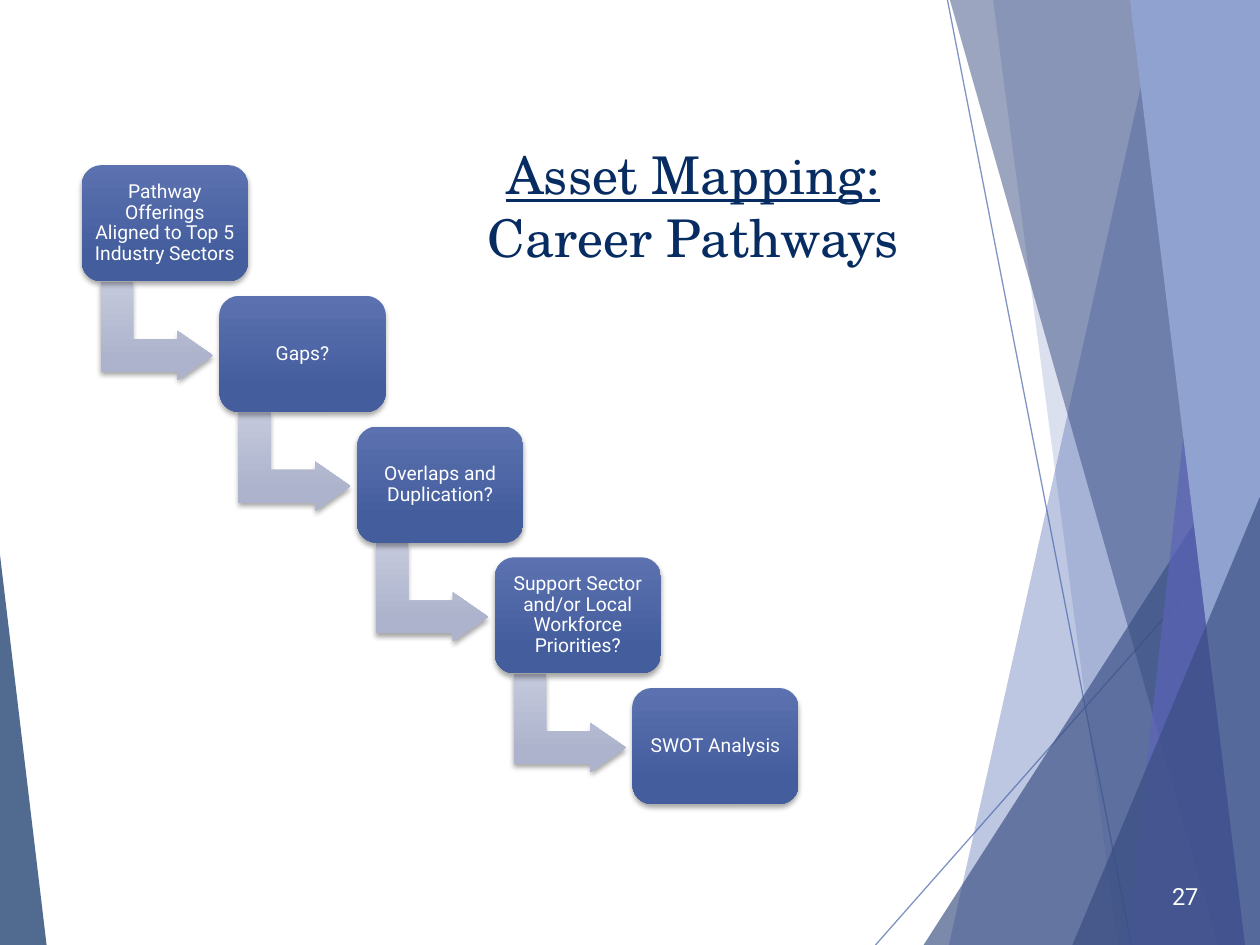
import dataclasses

import lxml.etree
import pptx
import pptx.dml.color
import pptx.enum.shapes
import pptx.enum.text
import pptx.oxml.ns
import pptx.util

Cm = pptx.util.Cm
Pt = pptx.util.Pt
qn = pptx.oxml.ns.qn
SHAPES = pptx.enum.shapes.MSO_SHAPE
ALIGN = pptx.enum.text.PP_ALIGN
MIDDLE = pptx.enum.text.MSO_ANCHOR.MIDDLE


@dataclasses.dataclass(frozen=True)
class Theme:
    heading_font: str = "TeX Gyre Schola"
    body_font: str = "Roboto"
    title_size: float = 29.7
    number_size: float = 13.5
    step_size: float = 11
    navy: str = "072C62"
    blue: str = "4A66AC"
    dark_blue: str = "384C81"
    violet: str = "5C64B7"
    light_blue: str = "90A2CF"
    white: str = "FFFFFF"
    step_gradient: tuple = ("5C72B0", "445D9D")
    arrow_gradient: tuple = ("C4C9DC", "ADB3CC")


THEME = Theme()
WIDTH, HEIGHT = 25.4, 19.05
STEPS = (
    "Pathway Offerings Aligned to Top 5 Industry Sectors",
    "Gaps?",
    "Overlaps and Duplication?",
    "Support Sector and/or Local Workforce Priorities?",
    "SWOT Analysis",
)
STEP_LEFT, STEP_TOP = 1.65, 3.33
STEP_WIDTH, STEP_HEIGHT = 3.35, 2.34
STEP_RIGHT, STEP_DOWN = 2.775, 2.635


def rgb(color):
    return pptx.dml.color.RGBColor.from_string(color)


def set_opacity(shape, percent):
    color = next(shape._element.spPr.iter(qn("a:srgbClr")))
    lxml.etree.SubElement(color, qn("a:alpha"), val=str(percent * 1000))


def fill_facet(shape, color, opacity):
    shape.shadow.inherit = False
    shape.line.fill.background()
    shape.fill.solid()
    shape.fill.fore_color.rgb = rgb(color)
    if opacity < 100:
        set_opacity(shape, opacity)


def add_hairline(slide, start, end):
    line = slide.shapes.add_connector(
        pptx.enum.shapes.MSO_CONNECTOR.STRAIGHT, *map(Cm, start + end))
    line.line.width = Pt(0.75)
    line.line.color.rgb = rgb(THEME.blue)
    set_opacity(line, 70)
    lxml.etree.SubElement(line._element.spPr, qn("a:effectLst"))


def add_panel(slide, top_left, bottom_left, color, opacity):
    builder = slide.shapes.build_freeform(Cm(top_left), 0, 1.0)
    corners = ((WIDTH, 0), (WIDTH, HEIGHT), (bottom_left, HEIGHT))
    builder.add_line_segments([(Cm(x), Cm(y)) for x, y in corners])
    fill_facet(builder.convert_to_shape(), color, opacity)


def add_wedge(slide, left, top, width, apex, color, opacity):
    wedge = slide.shapes.add_shape(
        SHAPES.ISOSCELES_TRIANGLE, Cm(left), Cm(top), Cm(width), Cm(HEIGHT - top))
    wedge.adjustments[0] = apex
    fill_facet(wedge, color, opacity)


def add_background(slide):
    add_hairline(slide, (19.1, 0), (22.81, HEIGHT))
    add_hairline(slide, (WIDTH, 10.26), (17.65, HEIGHT))
    add_panel(slide, 23.39, 19.13, THEME.blue, 36)
    add_panel(slide, 20.02, 22.53, THEME.blue, 20)
    add_wedge(slide, 18.62, 8.48, WIDTH - 18.62, 1, THEME.dark_blue, 66)
    add_panel(slide, 19.15, 24.56, THEME.dark_blue, 50)
    add_panel(slide, 24.84, 22.71, THEME.violet, 70)
    add_panel(slide, 22.78, 25.1, THEME.light_blue, 100)
    add_wedge(slide, 21.62, 10.01, WIDTH - 21.62, 1, THEME.dark_blue, 66)
    add_wedge(slide, 0, 11.18, 0.94, 0, THEME.navy, 70)


def style_font(font, name, size, color):
    font.name = name
    font.size = Pt(size)
    font.color.rgb = rgb(color)


def add_title(slide):
    title = slide.shapes.title
    title.left, title.top = Cm(9.27), Cm(2.77)
    title.width, title.height = Cm(9.42), Cm(2.74)
    text_frame = title.text_frame
    text_frame.auto_size = pptx.enum.text.MSO_AUTO_SIZE.NONE
    text_frame.vertical_anchor = MIDDLE
    paragraph = text_frame.paragraphs[0]
    paragraph.alignment = ALIGN.CENTER
    for text, underline in (("Asset Mapping: ", True), ("Career Pathways", False)):
        run = paragraph.add_run()
        run.text = text
        style_font(run.font, THEME.heading_font, THEME.title_size, THEME.navy)
        run.font.underline = underline


def add_slide_number(slide):
    box = slide.shapes.add_textbox(Cm(22.99), Cm(17.55), Cm(1.42), Cm(1.02))
    text_frame = box.text_frame
    text_frame.word_wrap = True
    text_frame.vertical_anchor = MIDDLE
    text_frame.text = "27"
    paragraph = text_frame.paragraphs[0]
    paragraph.alignment = ALIGN.RIGHT
    style_font(paragraph.runs[0].font, THEME.body_font, THEME.number_size, THEME.white)


def style_raised(shape, gradient):
    shape.line.fill.background()
    shape.fill.gradient()
    shape.fill.gradient_angle = 270
    for stop, color, position in zip(shape.fill.gradient_stops, gradient, (0, 0.78)):
        stop.color.rgb = rgb(color)
        stop.position = position
    properties = shape._element.spPr
    properties.find(qn("a:gradFill")).set("rotWithShape", "0")
    shape.shadow.inherit = False
    shadow = lxml.etree.SubElement(
        properties.find(qn("a:effectLst")), qn("a:outerShdw"),
        blurRad=str(Pt(3)), dist=str(Pt(2)), dir="5400000", rotWithShape="0")
    color = lxml.etree.SubElement(shadow, qn("a:srgbClr"), val="000000")
    lxml.etree.SubElement(color, qn("a:alpha"), val="35000")


def add_step_arrow(slide, left, top):
    arrow = slide.shapes.add_shape(
        SHAPES.BENT_UP_ARROW, Cm(left + 0.52), Cm(top + 2.21), Cm(1.98), Cm(2.26))
    arrow.rotation = 90
    for index, value in enumerate((0.33, 0.25, 0.36)):
        arrow.adjustments[index] = value
    style_raised(arrow, THEME.arrow_gradient)


def add_step(slide, text, left, top):
    step = slide.shapes.add_shape(
        SHAPES.ROUNDED_RECTANGLE, Cm(left), Cm(top), Cm(STEP_WIDTH), Cm(STEP_HEIGHT))
    style_raised(step, THEME.step_gradient)
    text_frame = step.text_frame
    text_frame.word_wrap = True
    text_frame.vertical_anchor = MIDDLE
    text_frame.margin_left = text_frame.margin_right = Cm(0.12)
    text_frame.margin_top = text_frame.margin_bottom = Cm(0.12)
    text_frame.text = text
    paragraph = text_frame.paragraphs[0]
    paragraph.alignment = ALIGN.CENTER
    paragraph.line_spacing = 0.9
    style_font(paragraph.runs[0].font, THEME.body_font, THEME.step_size, THEME.white)


def add_staircase(slide):
    for index, text in enumerate(STEPS):
        left = STEP_LEFT + index * STEP_RIGHT
        top = STEP_TOP + index * STEP_DOWN
        if index < len(STEPS) - 1:
            add_step_arrow(slide, left, top)
        add_step(slide, text, left, top)


def main():
    presentation = pptx.Presentation()
    presentation.slide_width = Cm(WIDTH)
    presentation.slide_height = Cm(HEIGHT)
    slide = presentation.slides.add_slide(presentation.slide_layouts[5])
    add_background(slide)
    add_title(slide)
    add_slide_number(slide)
    add_staircase(slide)
    presentation.save("out.pptx")


if __name__ == "__main__":
    main()
